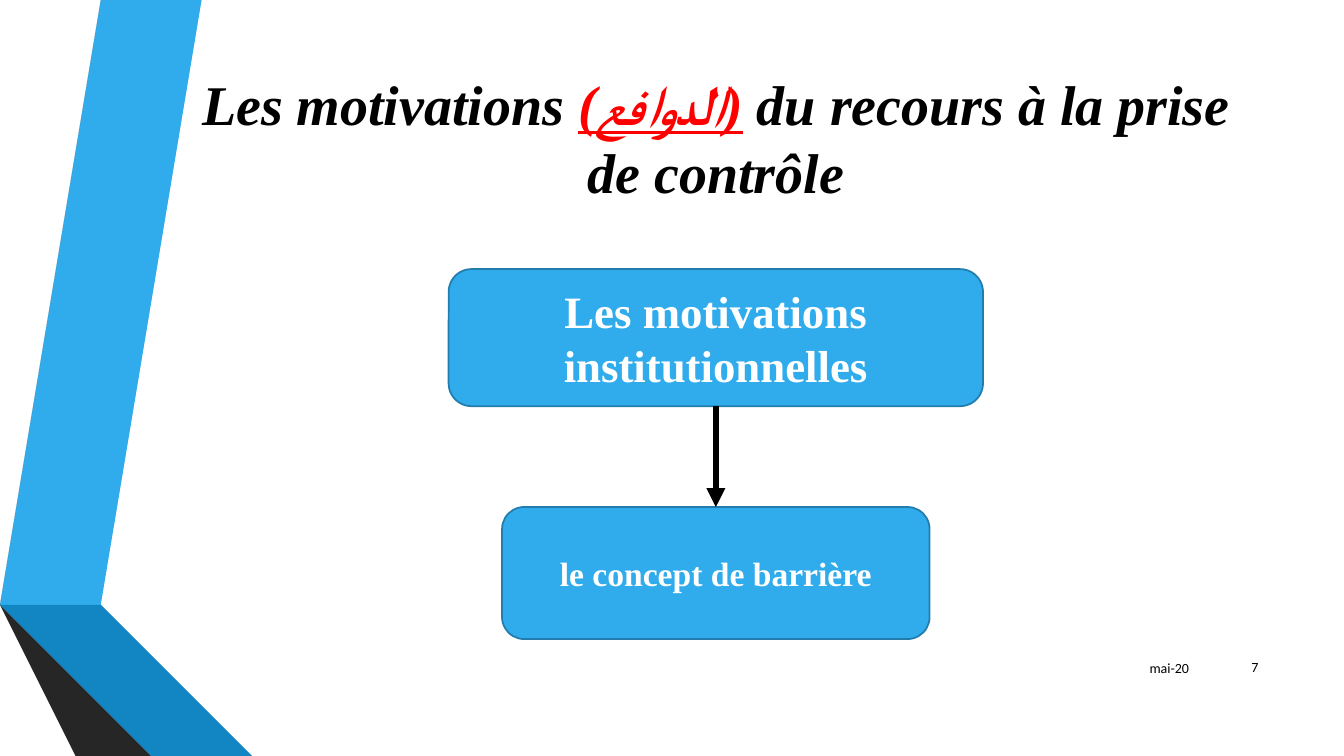
from dataclasses import dataclass

from lxml.etree import SubElement
from pptx import Presentation
from pptx.dml.color import RGBColor
from pptx.enum.shapes import MSO_CONNECTOR, MSO_SHAPE
from pptx.enum.text import MSO_ANCHOR, PP_ALIGN
from pptx.oxml.ns import qn
from pptx.shapes.autoshape import Shape
from pptx.slide import Slide
from pptx.text.text import Font, TextFrame
from pptx.util import Inches, Pt

COLORS = {
    "blue": "30ACEC", "blue_mid": "1186C3", "blue_dark": "0B5982", "outline": "237DAC",
    "gray": "595959", "gray_mid": "3F3F3F", "gray_dark": "262626",
    "black": "000000", "white": "FFFFFF", "red": "FF0000",
}
SERIF, SANS = "Times New Roman", "Calibri"


@dataclass
class Ribbon:
    color: str
    points: list[tuple[float, float]]


@dataclass
class Box:
    text: str
    left: float
    top: float
    width: float
    height: float
    size: int


RIBBONS = [
    Ribbon("blue", [(0.5, 5.78), (0.77, 5.83), (1.73, 0), (1.45, 0)]),
    Ribbon("gray", [(1.39, 0), (1.11, 0), (0.16, 5.73), (0.44, 5.77)]),
    Ribbon("gray_dark", [(0.16, 5.73), (1.45, 7.5), (1.51, 7.5)]),
    Ribbon("blue_dark", [(0.5, 5.79), (2.08, 7.5), (2.14, 7.5)]),
    Ribbon("blue_mid", [(0.5, 5.78), (2.14, 7.5), (2.83, 7.5), (0.77, 5.83)]),
    Ribbon("gray_mid", [(2.02, 7.5), (0.48, 5.83), (0.44, 5.77), (0.16, 5.73), (1.51, 7.5)]),
]
FOOTERS = [
    Box("mai-20", 10.64, 6.43, 1.25, 0.4, 10),
    Box("7", 11.98, 6.42, 0.6, 0.4, 10),
]
CAUSE = Box("Les motivations institutionnelles", 4.45, 2.67, 5.3, 1.36, 32)
CONCEPT = Box("le concept de barrière", 4.98, 5.03, 4.24, 1.31, 24)
TITLE = Box("", 1.62, 0.4, 10.96, 1.92, 40)
TITLE_RUNS = [
    ("Les motivations ", "black"),
    ("(الدوافع)", "red"),
    (" du recours à la prise de contrôle", "black"),
]


def rgb(name: str) -> RGBColor:
    return RGBColor.from_string(COLORS[name])


def style_font(font: Font, name: str, size: int, color: str, bold: bool = False) -> None:
    font.name, font.size, font.bold = name, Pt(size), bold
    font.color.rgb = rgb(color)


def add_ribbon(s: Slide, ribbon: Ribbon) -> None:
    start, *rest = ribbon.points
    builder = s.shapes.build_freeform(*start, scale=Inches(1))
    builder.add_line_segments(rest, close=True)
    sp = builder.convert_to_shape()
    sp.shadow.inherit = False
    sp.fill.solid()
    sp.fill.fore_color.rgb = rgb(ribbon.color)
    sp.line.fill.background()


def place(box: Box) -> list[Inches]:
    return [Inches(v) for v in (box.left, box.top, box.width, box.height)]


def add_text(s: Slide, box: Box, align: PP_ALIGN) -> TextFrame:
    tf = s.shapes.add_textbox(*place(box)).text_frame
    tf.word_wrap = True
    tf.vertical_anchor = MSO_ANCHOR.MIDDLE
    tf.text = box.text
    tf.paragraphs[0].alignment = align
    return tf


def add_node(s: Slide, box: Box) -> Shape:
    sp = s.shapes.add_shape(MSO_SHAPE.ROUNDED_RECTANGLE, *place(box))
    sp.shadow.inherit = False
    sp.fill.solid()
    sp.fill.fore_color.rgb = rgb("blue")
    sp.line.color.rgb = rgb("outline")
    sp.line.width = Pt(1.25)
    tf = sp.text_frame
    tf.word_wrap = True
    tf.vertical_anchor = MSO_ANCHOR.MIDDLE
    tf.text = box.text
    p = tf.paragraphs[0]
    p.alignment = PP_ALIGN.CENTER
    style_font(p.runs[0].font, SERIF, box.size, "white", bold=True)
    return sp


def add_arrow(s: Slide, upper: Shape, lower: Shape) -> None:
    """Join the bottom of the upper box to the top of the lower one."""
    arrow = s.shapes.add_connector(MSO_CONNECTOR.STRAIGHT, 0, 0, 0, 0)
    arrow.begin_connect(upper, 2)
    arrow.end_connect(lower, 0)
    arrow.line.color.rgb = rgb("black")
    arrow.line.width = Pt(4.5)
    sp_pr = arrow.line._get_or_add_ln().getparent()
    SubElement(sp_pr.find(qn("a:ln")), qn("a:tailEnd"), type="triangle")
    SubElement(sp_pr, qn("a:effectLst"))


def add_title(s: Slide) -> None:
    p = add_text(s, TITLE, PP_ALIGN.CENTER).paragraphs[0]
    for text, color in TITLE_RUNS:
        r = p.add_run()
        r.text = text
        style_font(r.font, SERIF, TITLE.size, color, bold=True)
        r.font.italic = True
        r.font.underline = color == "red"
        SubElement(r.font._element, qn("a:cs"), typeface=SERIF)


def main() -> None:
    prs = Presentation()
    prs.slide_width, prs.slide_height = Inches(13.33), Inches(7.5)
    s = prs.slides.add_slide(prs.slide_layouts[6])
    for ribbon in RIBBONS:
        add_ribbon(s, ribbon)
    for footer in FOOTERS:
        tf = add_text(s, footer, PP_ALIGN.RIGHT)
        style_font(tf.paragraphs[0].runs[0].font, SANS, footer.size, "black")
    cause, concept = add_node(s, CAUSE), add_node(s, CONCEPT)
    add_arrow(s, cause, concept)
    add_title(s)
    prs.save("out.pptx")


if __name__ == "__main__":
    main()
